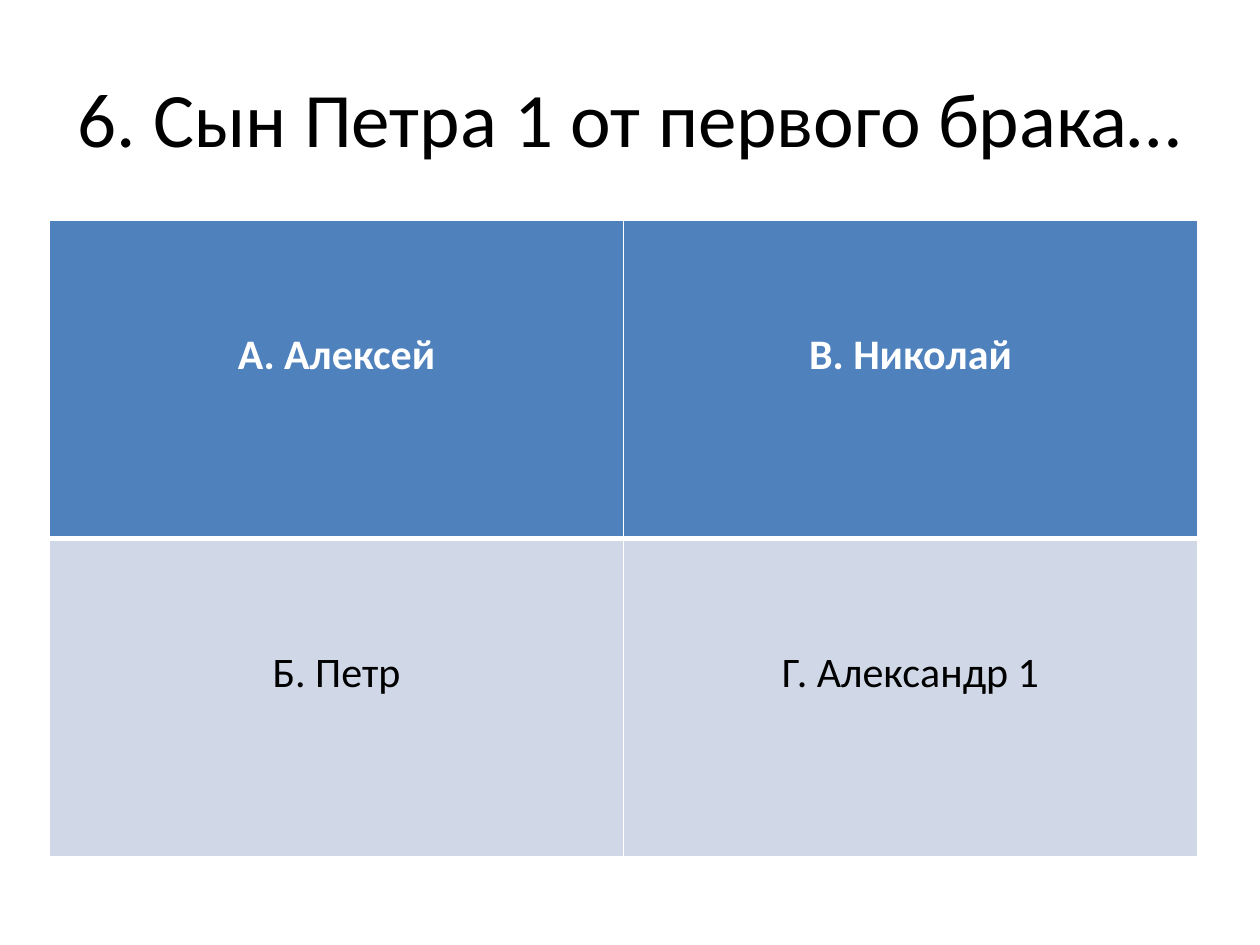
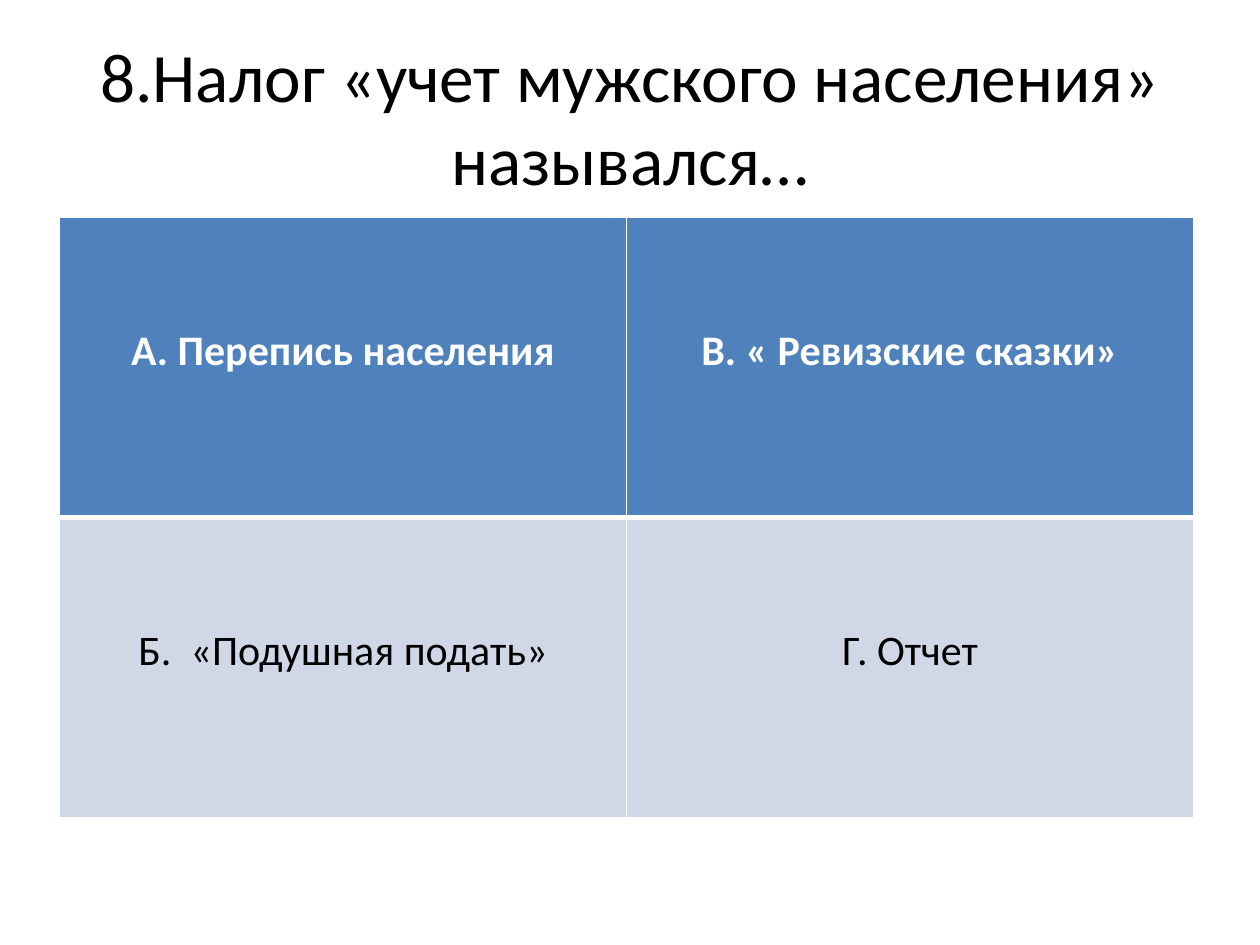
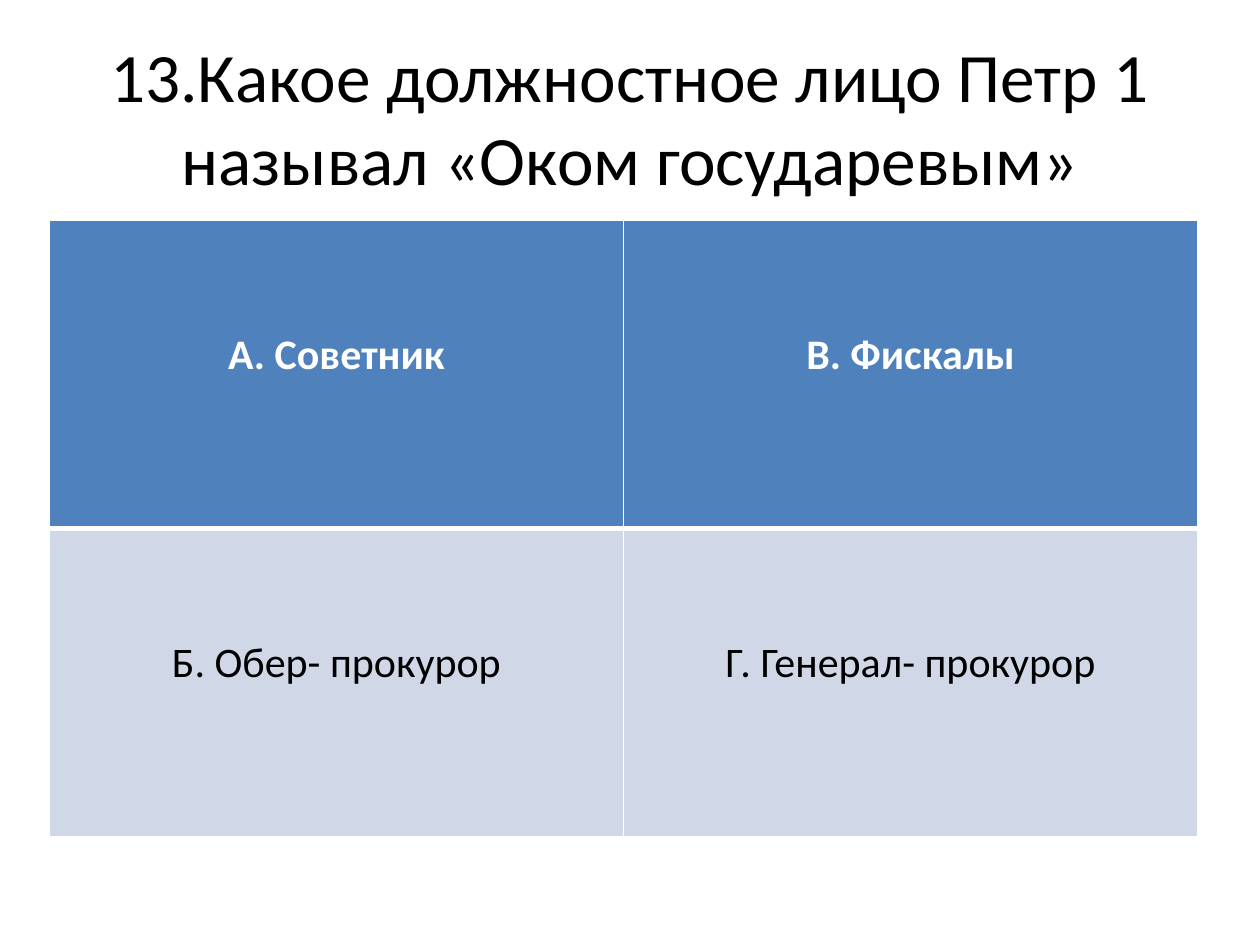
from lxml import etree
from pptx import Presentation
from pptx.dml.color import RGBColor
from pptx.enum import text
from pptx.oxml import ns
from pptx.util import Pt

# Content: title, title size, table (left, top, width, row height), answers by row
QUESTIONS = [
    ("6. Сын Петра 1 от первого брака…", 44, (28.3, 126, 656, 181.8),
     [("А. Алексей", "В. Николай"),
      ("Б. Петр", "Г. Александр 1")]),
    ("8.Налог «учет мужского населения» назывался…", 39.6, (34, 124, 648, 171.6),
     [("А. Перепись населения", "В. « Ревизские сказки»"),
      ("Б.  «Подушная подать»", "Г. Отчет")]),
    ("13.Какое должностное лицо Петр 1 называл «Оком государевым»", 39.6,
     (28.3, 126, 656, 176),
     [("А. Советник", "В. Фискалы"),
      ("Б. Обер- прокурор", "Г. Генерал- прокурор")]),
]

# Shared style
WHITE = RGBColor(0xFF, 0xFF, 0xFF)
BLACK = RGBColor(0x00, 0x00, 0x00)
BLUE = RGBColor(0x4F, 0x81, 0xBD)
PALE = RGBColor(0xD0, 0xD8, 0xE8)
FONT = "Calibri"
ANSWER_SIZE = 24
ANSWER_DROP = 62.2  # space above an answer: two lines and the cell margin
THIN, THICK = 1, 3
# Per row: fill, font colour, bold, border widths
ROW_STYLES = [
    (BLUE, WHITE, True, {"lnL": THIN, "lnR": THIN, "lnT": THIN, "lnB": THICK}),
    (PALE, BLACK, False, {"lnL": THIN, "lnR": THIN, "lnT": THICK, "lnB": THIN}),
]


def style_paragraph(para, size, color, bold=False):
    para.alignment = text.PP_ALIGN.CENTER
    font = para.font
    font.name, font.size, font.bold = FONT, Pt(size), bold
    font.color.rgb = color


def add_title(page, title, size):
    box = page.shapes.add_textbox(Pt(36), Pt(21.6), Pt(648), Pt(90))
    frame = box.text_frame
    frame.word_wrap = True
    frame.vertical_anchor = text.MSO_ANCHOR.MIDDLE
    frame.text = title
    style_paragraph(frame.paragraphs[0], size, BLACK)


def add_borders(cell, widths):
    properties = cell._tc.get_or_add_tcPr()
    for side, width in widths.items():
        line = etree.SubElement(properties, ns.qn("a:" + side), w=str(Pt(width)))
        fill = etree.SubElement(line, ns.qn("a:solidFill"))
        etree.SubElement(fill, ns.qn("a:srgbClr"), val=str(WHITE))


def add_answers(page, place, answers):
    left, top, width, row_height = place
    rows, columns = len(answers), len(answers[0])
    table = page.shapes.add_table(rows, columns, Pt(left), Pt(top),
                                  Pt(width), Pt(row_height * rows)).table
    for r, (row, style) in enumerate(zip(answers, ROW_STYLES)):
        fill, color, bold, borders = style
        for c, answer in enumerate(row):
            cell = table.cell(r, c)
            add_borders(cell, borders)
            cell.fill.solid()
            cell.fill.fore_color.rgb = fill
            cell.margin_top = Pt(ANSWER_DROP)
            cell.text = answer
            style_paragraph(cell.text_frame.paragraphs[0], ANSWER_SIZE, color, bold)


def main():
    deck = Presentation()
    deck.slide_width, deck.slide_height = Pt(720), Pt(540)
    for title, size, place, answers in QUESTIONS:
        page = deck.slides.add_slide(deck.slide_layouts[6])
        add_title(page, title, size)
        add_answers(page, place, answers)
    deck.save("out.pptx")


if __name__ == "__main__":
    main()
